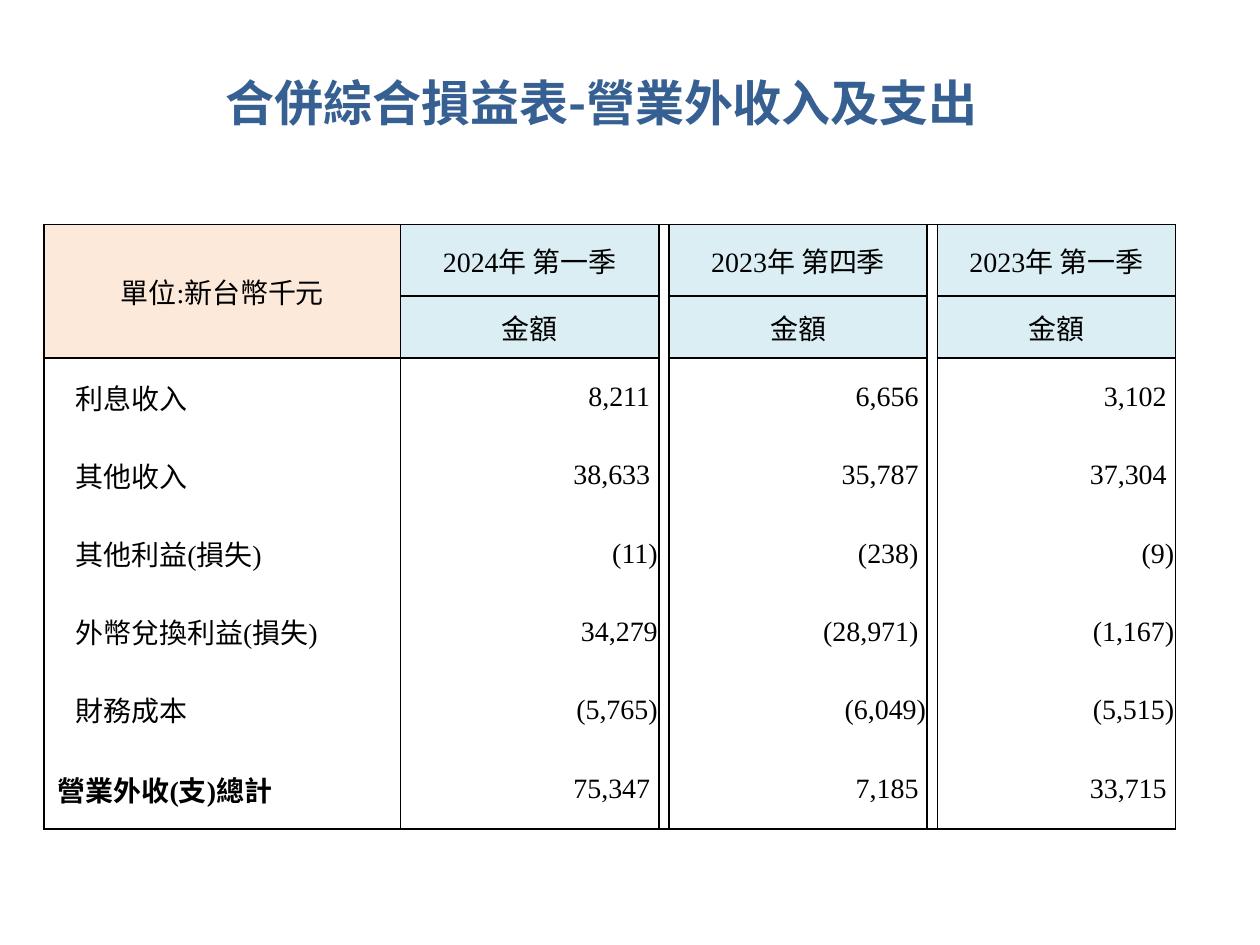
import pptx
import pptx.util
import pptx.dml.color
import pptx.enum.text
import pptx.oxml
import pptx.oxml.ns

Inches = pptx.util.Inches
Align = pptx.enum.text.PP_ALIGN
Anchor = pptx.enum.text.MSO_ANCHOR

COLORS = {"title": "376092", "text": "000000", "border": "000000",
          "unit": "FDE9D9", "period": "DBEEF3"}
FONTS = {"title": "Noto Sans CJK SC", "latin": "Times New Roman", "asian": "Noto Sans CJK SC"}
NO_STYLE = "{2D5ABB26-0587-4C30-8999-92F81FD0307C}"

TITLE = "合併綜合損益表-營業外收入及支出"
UNIT = "單位:新台幣千元"
PERIODS = ["2024年 第一季", "2023年 第四季", "2023年 第一季"]
AMOUNT = "金額"
ROWS = [
    ("利息收入", ["8,211", "6,656", "3,102"]),
    ("其他收入", ["38,633", "35,787", "37,304"]),
    ("其他利益(損失)", ["(11)", "(238)", "(9)"]),
    ("外幣兌換利益(損失)", ["34,279", "(28,971)", "(1,167)"]),
    ("財務成本", ["(5,765)", "(6,049)", "(5,515)"]),
    ("營業外收(支)總計", ["75,347", "7,185", "33,715"]),
]
FLUSH_VALUES = {"(11)", "(9)", "34,279", "(1,167)", "(5,765)", "(6,049)", "(5,515)"}
COLUMN_WIDTHS = [2.83, 2.05, 0.08, 2.05, 0.08, 1.89]
ROW_HEIGHTS = [0.57, 0.49] + [0.62] * 5 + [0.64]
VALUE_COLUMNS = [1, 3, 5]
HEADER_ROWS = 2
INSET = 0.01


def set_attributes(target, values):
    for name, value in values.items():
        setattr(target, name, value)


def format_font(font, color, values):
    set_attributes(font, values)
    font.color.rgb = pptx.dml.color.RGBColor.from_string(COLORS[color])


def write_text(paragraph, text, color, values):
    run = paragraph.add_run()
    run.text = text
    format_font(run.font, color, values)
    asian = pptx.oxml.parse_xml(
        f'<a:ea {pptx.oxml.ns.nsdecls("a")} typeface="{FONTS["asian"]}"/>')
    run.font._element.find(pptx.oxml.ns.qn("a:latin")).addnext(asian)


def add_title(slide, left, top, width, height):
    title = slide.shapes.title
    set_attributes(title, {"left": left, "top": top, "width": width, "height": height})
    set_attributes(title.text_frame, {
        "word_wrap": True, "vertical_anchor": Anchor.MIDDLE,
        "auto_size": pptx.enum.text.MSO_AUTO_SIZE.NONE})
    paragraph = title.text_frame.paragraphs[0]
    paragraph.alignment = Align.LEFT
    write_text(paragraph, TITLE, "title",
               {"size": pptx.util.Pt(28), "bold": True, "name": FONTS["title"]})


def set_borders(cell, sides):
    properties = cell._tc.get_or_add_tcPr()
    for side in "LRTB":
        paint = "<a:noFill/>"
        if side in sides:
            paint = f'<a:solidFill><a:srgbClr val="{COLORS["border"]}"/></a:solidFill>'
        properties.append(pptx.oxml.parse_xml(
            f'<a:ln{side} {pptx.oxml.ns.nsdecls("a")} w="12700">{paint}</a:ln{side}>'))


def border_sides(row, column):
    is_gap = column > 0 and column not in VALUE_COLUMNS
    if row < HEADER_ROWS and not is_gap:
        return "LRTB"
    sides = "LR"
    if row == 0 or (row == HEADER_ROWS and not is_gap):
        sides += "T"
    if row == len(ROW_HEIGHTS) - 1:
        sides += "B"
    return sides


def prepare_cell(cell, row, column):
    set_borders(cell, border_sides(row, column))
    if row < HEADER_ROWS and (column == 0 or column in VALUE_COLUMNS):
        cell.fill.solid()
        color = COLORS["unit" if column == 0 else "period"]
        cell.fill.fore_color.rgb = pptx.dml.color.RGBColor.from_string(color)
    else:
        cell.fill.background()
    set_attributes(cell, {
        "margin_left": Inches(INSET), "margin_right": Inches(INSET),
        "margin_top": Inches(INSET), "margin_bottom": 0,
        "vertical_anchor": Anchor.MIDDLE})
    cell.text_frame.paragraphs[0].font.size = pptx.util.Pt(16)


def fill_cell(cell, text, alignment, bold=False, left=INSET, right=INSET):
    set_attributes(cell, {"margin_left": Inches(left), "margin_right": Inches(right)})
    paragraph = cell.text_frame.paragraphs[0]
    paragraph.alignment = alignment
    write_text(paragraph, text, "text",
               {"size": pptx.util.Pt(16), "bold": bold, "name": FONTS["latin"]})


def add_income_table(slide, left, top, width, height):
    frame = slide.shapes.add_table(
        len(ROW_HEIGHTS), len(COLUMN_WIDTHS), left, top, width, height)
    table = frame.table
    set_attributes(table, {"first_row": False, "horz_banding": False})
    table._tbl.tblPr.find(pptx.oxml.ns.qn("a:tableStyleId")).text = NO_STYLE
    for column, size in zip(table.columns, COLUMN_WIDTHS):
        column.width = Inches(size)
    for row, size in zip(table.rows, ROW_HEIGHTS):
        row.height = Inches(size)
    for row in range(len(ROW_HEIGHTS)):
        for column in range(len(COLUMN_WIDTHS)):
            prepare_cell(table.cell(row, column), row, column)

    table.cell(0, 0).merge(table.cell(1, 0))
    fill_cell(table.cell(0, 0), UNIT, Align.CENTER)
    for column, period in zip(VALUE_COLUMNS, PERIODS):
        fill_cell(table.cell(0, column), period, Align.CENTER)
        fill_cell(table.cell(1, column), AMOUNT, Align.CENTER)
    for row, (label, values) in enumerate(ROWS, HEADER_ROWS):
        is_total = row == len(ROW_HEIGHTS) - 1
        fill_cell(table.cell(row, 0), label, Align.LEFT,
                  bold=is_total, left=0.11 if is_total else 0.25)
        for column, value in zip(VALUE_COLUMNS, values):
            fill_cell(table.cell(row, column), value, Align.RIGHT,
                      right=INSET if value in FLUSH_VALUES else 0.07)


def main():
    presentation = pptx.Presentation()
    set_attributes(presentation, {"slide_width": Inches(10), "slide_height": Inches(7.5)})
    slide = presentation.slides.add_slide(presentation.slide_layouts[5])
    add_title(slide, Inches(1.69), Inches(0.52), Inches(8.11), Inches(0.57))
    add_income_table(slide, Inches(0.35), Inches(1.78), Inches(8.98), Inches(4.8))
    presentation.save("out.pptx")


if __name__ == "__main__":
    main()
